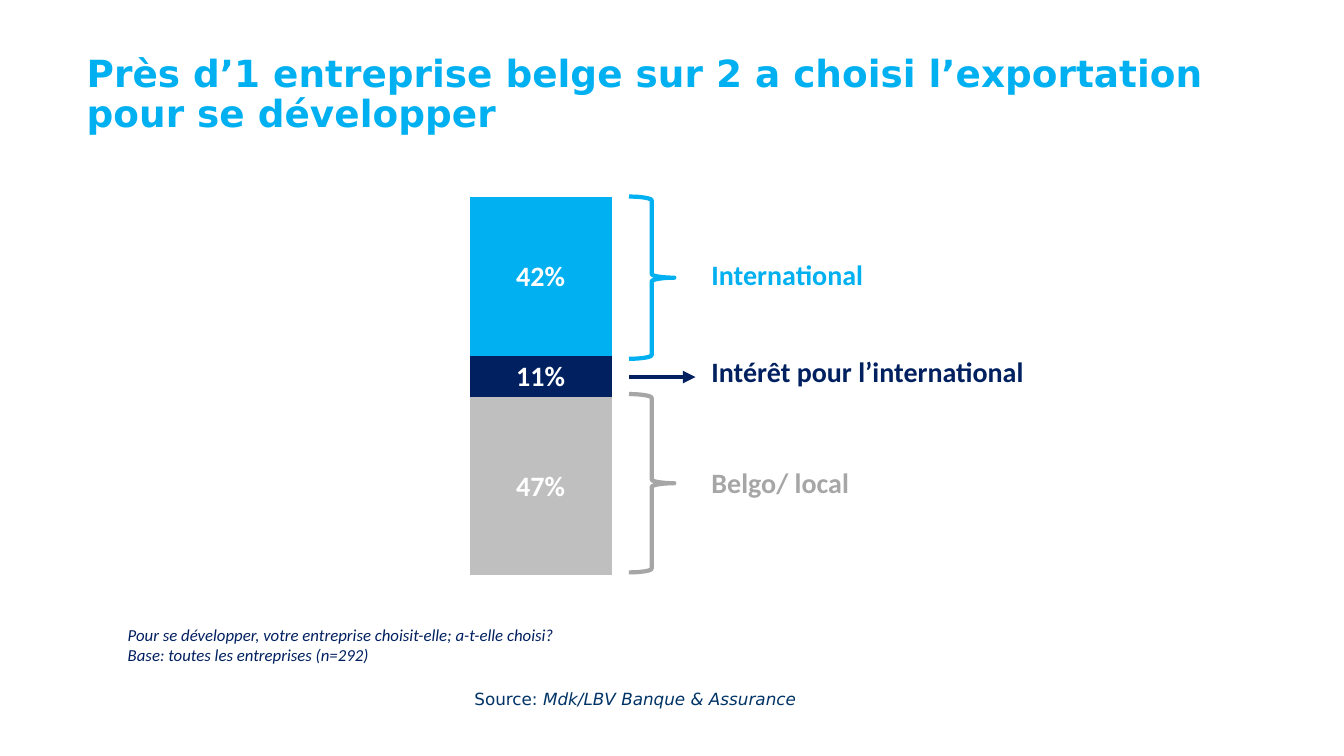
from lxml.etree import SubElement
from pptx import Presentation
from pptx.chart.data import CategoryChartData
from pptx.dml.color import RGBColor
from pptx.enum.chart import XL_CHART_TYPE
from pptx.enum.shapes import MSO_CONNECTOR, MSO_SHAPE
from pptx.enum.text import MSO_ANCHOR, MSO_AUTO_SIZE, PP_ALIGN
from pptx.oxml import parse_xml
from pptx.oxml.ns import nsdecls, qn
from pptx.util import Pt

SKY = RGBColor(0x00, 0xB0, 0xF0)
NAVY = RGBColor(0x00, 0x20, 0x60)
SILVER = RGBColor(0xBF, 0xBF, 0xBF)
GREY = RGBColor(0xA6, 0xA6, 0xA6)
SOURCE_BLUE = RGBColor(0x00, 0x33, 0x66)
WHITE = RGBColor(0xFF, 0xFF, 0xFF)
BLACK = RGBColor(0x00, 0x00, 0x00)

HEADING_FONT = "DejaVu Sans"
BODY_FONT = "Calibri"
MARKER_LEFT = 449.3
LABEL_LEFT = 501.1


class SlideBuilder:
    def __init__(self, presentation):
        self.slide = presentation.slides.add_slide(presentation.slide_layouts[5])
        self.shapes = self.slide.shapes
        self.line_width = Pt(3)

    def style(self, font, size, color, name=BODY_FONT, bold=False, italic=False):
        font.name, font.size = name, Pt(size)
        font.bold, font.italic = bold, italic
        font.color.rgb = color

    def title(self, text, left, top, width, height):
        title = self.shapes.title
        title.left, title.top = Pt(left), Pt(top)
        title.width, title.height = Pt(width), Pt(height)
        frame = title.text_frame
        frame.text = text
        frame.auto_size = MSO_AUTO_SIZE.NONE
        frame.vertical_anchor = MSO_ANCHOR.MIDDLE
        paragraph = frame.paragraphs[0]
        paragraph.alignment = PP_ALIGN.LEFT
        paragraph.line_spacing = 0.9
        self.style(paragraph.runs[0].font, 26.7, SKY, HEADING_FONT, bold=True)

    def text(self, text, left, top, width, height, size, color, **style):
        box = self.shapes.add_textbox(Pt(left), Pt(top), Pt(width), Pt(height))
        frame = box.text_frame
        frame.word_wrap = True
        frame.text = text
        for paragraph in frame.paragraphs:
            for run in paragraph.runs:
                self.style(run.font, size, color, **style)
        return frame

    def label(self, text, top, width, color):
        self.text(text, LABEL_LEFT, top, width, 31.7, 20, color, bold=True)

    def brace(self, top, height, color):
        brace = self.shapes.add_shape(
            MSO_SHAPE.RIGHT_BRACE, Pt(MARKER_LEFT), Pt(top), Pt(32.4), Pt(height))
        brace.shadow.inherit = False
        brace.fill.background()
        brace.line.color.rgb = color
        brace.line.width = self.line_width

    def arrow(self, left, right, y, color):
        arrow = self.shapes.add_connector(
            MSO_CONNECTOR.STRAIGHT, Pt(left), Pt(y), Pt(right), Pt(y))
        arrow.line.color.rgb = color
        arrow.line.width = self.line_width
        SubElement(arrow.line._get_or_add_ln(), qn("a:tailEnd"), type="triangle")
        SubElement(arrow._element.spPr, qn("a:effectLst"))

    def stacked_column(self, series, left, top, width, height, plot_area):
        """Draw one 100 % column from (name, value, color) rows, bottom first."""
        data = CategoryChartData(number_format="0%")
        data.categories = ["1"]
        for name, value, _ in series:
            data.add_series(name, [value])
        chart = self.shapes.add_chart(
            XL_CHART_TYPE.COLUMN_STACKED_100,
            Pt(left), Pt(top), Pt(width), Pt(height), data).chart
        chart.has_legend = chart.has_title = False
        self.style(chart.font, 20, BLACK)
        chart.category_axis.visible = chart.value_axis.visible = False
        chart.value_axis.has_major_gridlines = False
        plot = chart.plots[0]
        plot.gap_width, plot.overlap = 95, 100
        plot.vary_by_categories = False
        for bar, (_, _, color) in zip(plot.series, series):
            bar.format.fill.solid()
            bar.format.fill.fore_color.rgb = color
            labels = bar.data_labels
            labels.show_value = True
            labels.number_format, labels.number_format_is_linked = "0%", False
            self.style(labels.font, 20, WHITE, bold=True)
        self.place_plot(chart, plot_area)

    def place_plot(self, chart, fractions):
        """Set the inner plot area as x, y, width and height shares of the chart."""
        area = chart._chartSpace.chart.plotArea
        for layout in area.findall(qn("c:layout")):
            area.remove(layout)
        settings = [("layoutTarget", "inner"), ("xMode", "edge"), ("yMode", "edge"),
                    *zip("xywh", fractions)]
        content = "".join(f'<c:{tag} val="{value}"/>' for tag, value in settings)
        area.insert(0, parse_xml(
            f'<c:layout {nsdecls("c")}><c:manualLayout>{content}'
            "</c:manualLayout></c:layout>"))


def main():
    presentation = Presentation()
    presentation.slide_width, presentation.slide_height = Pt(960), Pt(540)
    builder = SlideBuilder(presentation)

    builder.title(
        "Près d’1 entreprise belge sur 2 a choisi l’exportation pour se développer",
        54.7, 39.6, 864, 56.9)
    builder.stacked_column(
        [("Series 1", 0.47, SILVER), ("Series 2", 0.11, NAVY), ("Series 3", 0.42, SKY)],
        199.4, 111.6, 519.1, 321.8, (0.17, 0.09, 0.38, 0.84))

    source = builder.text("Source: ", 203, 488.2, 501.8, 21.6, 12, SOURCE_BLUE,
                          name=HEADING_FONT)
    paragraph = source.paragraphs[0]
    paragraph.alignment = PP_ALIGN.CENTER
    publisher = paragraph.add_run()
    publisher.text = "Mdk/LBV Banque & Assurance"
    builder.style(publisher.font, 12, SOURCE_BLUE, HEADING_FONT, italic=True)

    builder.text(
        "Pour se développer, votre entreprise choisit-elle; a-t-elle choisi?\n"
        "Base: toutes les entreprises (n=292)",
        84.2, 442.8, 480.2, 36, 12, NAVY, italic=True)

    builder.brace(281.5, 127.4, GREY)
    builder.label("Belgo/ local", 329, 176.4, GREY)
    builder.brace(140.4, 115.9, SKY)
    builder.label("International", 180.7, 173.5, SKY)
    builder.label("Intérêt pour l’international", 249.8, 332.6, NAVY)
    builder.arrow(MARKER_LEFT, 496.8, 269.3, NAVY)

    presentation.save("out.pptx")


if __name__ == "__main__":
    main()
